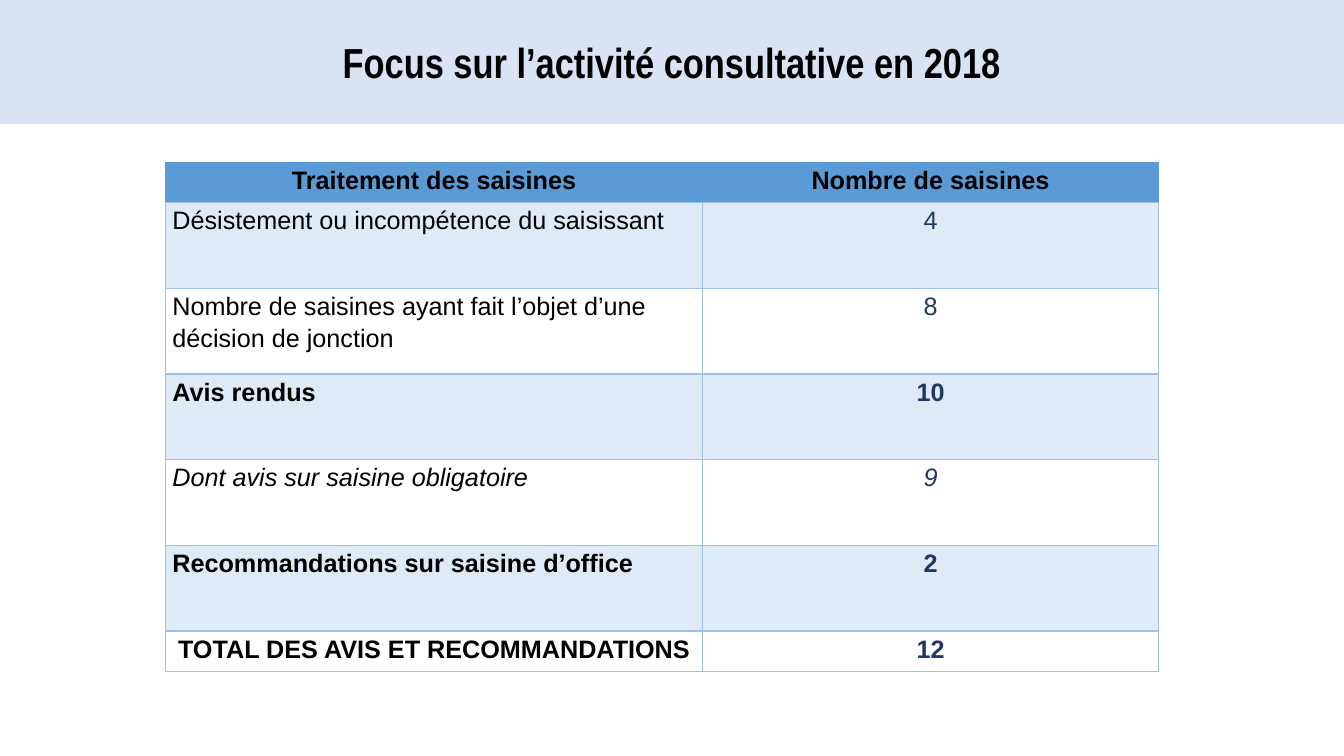
from pptx import Presentation
from pptx.dml.color import RGBColor as Color
from pptx.enum.shapes import MSO_SHAPE as Shape
from pptx.enum.text import MSO_ANCHOR as Anchor, PP_ALIGN as Align
from pptx.oxml import parse_xml
from pptx.oxml.ns import nsdecls
from pptx.util import Inches, Pt

# Content: label, count, style
TITLE = "Focus sur l’activité consultative en 2018"
ROWS = [
    ("Traitement des saisines", "Nombre de saisines", "header"),
    ("Désistement ou incompétence du saisissant", "4", "plain"),
    ("Nombre de saisines ayant fait l’objet d’une décision de jonction", "8", "plain"),
    ("Avis rendus", "10", "bold"),
    ("Dont avis sur saisine obligatoire", "9", "italic"),
    ("Recommandations sur saisine d’office", "2", "bold"),
    ("TOTAL DES AVIS ET RECOMMANDATIONS", "12", "total"),
]

THEME = {
    "banner": "DAE3F3", "header": "5B9BD5", "band": "DEEAF6", "border": "9CC2E5",
    "text": "000000", "count": "1F3864",
    "title_font": "Arial Narrow", "body_font": "Arial",
    "title_size": 30, "body_size": 18,
}
SLIDE_WIDTH, SLIDE_HEIGHT, BANNER_HEIGHT = 13.33, 7.5, 1.23
TABLE_LEFT, TABLE_TOP = 1.64, 1.61
COLUMN_WIDTHS = (5.33, 4.52)
SHORT_ROW, TALL_ROW = 0.4, 0.85


def theme_color(name):
    return Color.from_string(THEME[name])


def set_font(para, kind, color, bold=False, italic=False):
    font = para.font
    font.name = THEME[f"{kind}_font"]
    font.size = Pt(THEME[f"{kind}_size"])
    font.color.rgb = theme_color(color)
    font.bold, font.italic = bold, italic


def set_borders(cell, color):
    properties = cell._tc.get_or_add_tcPr()
    for index, side in enumerate(("lnL", "lnR", "lnT", "lnB")):
        line = parse_xml(
            f'<a:{side} {nsdecls("a")} w="{Pt(1)}"><a:solidFill>'
            f'<a:srgbClr val="{THEME[color]}"/></a:solidFill></a:{side}>')
        properties.insert(index, line)


def fill_cell(cell, text, row, column, style):
    is_header = style == "header"
    cell.margin_left = cell.margin_right = Inches(0.07)
    cell.margin_top = cell.margin_bottom = 0
    if is_header or row % 2:
        cell.fill.solid()
        cell.fill.fore_color.rgb = theme_color("header" if is_header else "band")
    else:
        cell.fill.background()
    set_borders(cell, "header" if is_header else "border")

    cell.text = text
    para = cell.text_frame.paragraphs[0]
    centred = column == 1 or style in ("header", "total")
    para.alignment = Align.CENTER if centred else Align.LEFT
    para.line_spacing = 1.15
    para.space_after = Pt(12)
    set_font(para, "body", "count" if column and not is_header else "text",
             bold=style in ("header", "bold", "total"), italic=style == "italic")


def add_banner(page):
    banner = page.shapes.add_shape(
        Shape.RECTANGLE, 0, 0, Inches(SLIDE_WIDTH), Inches(BANNER_HEIGHT))
    banner.shadow.inherit = False
    banner.fill.solid()
    banner.fill.fore_color.rgb = theme_color("banner")
    banner.line.fill.background()
    frame = banner.text_frame
    frame.text = TITLE
    frame.word_wrap = True
    frame.vertical_anchor = Anchor.MIDDLE
    para = frame.paragraphs[0]
    para.alignment = Align.CENTER
    set_font(para, "title", "text", bold=True)


def add_referral_table(page):
    heights = [SHORT_ROW if style in ("header", "total") else TALL_ROW
               for _, _, style in ROWS]
    table = page.shapes.add_table(
        len(ROWS), len(COLUMN_WIDTHS), Inches(TABLE_LEFT), Inches(TABLE_TOP),
        Inches(sum(COLUMN_WIDTHS)), Inches(sum(heights))).table
    table.horz_banding = False
    for column, width in zip(table.columns, COLUMN_WIDTHS):
        column.width = Inches(width)
    for row, (*texts, style) in enumerate(ROWS):
        table.rows[row].height = Inches(heights[row])
        for column, text in enumerate(texts):
            fill_cell(table.cell(row, column), text, row, column, style)


def main():
    deck = Presentation()
    deck.slide_width, deck.slide_height = Inches(SLIDE_WIDTH), Inches(SLIDE_HEIGHT)
    page = deck.slides.add_slide(deck.slide_layouts[6])
    add_banner(page)
    add_referral_table(page)
    deck.save("out.pptx")


if __name__ == "__main__":
    main()
